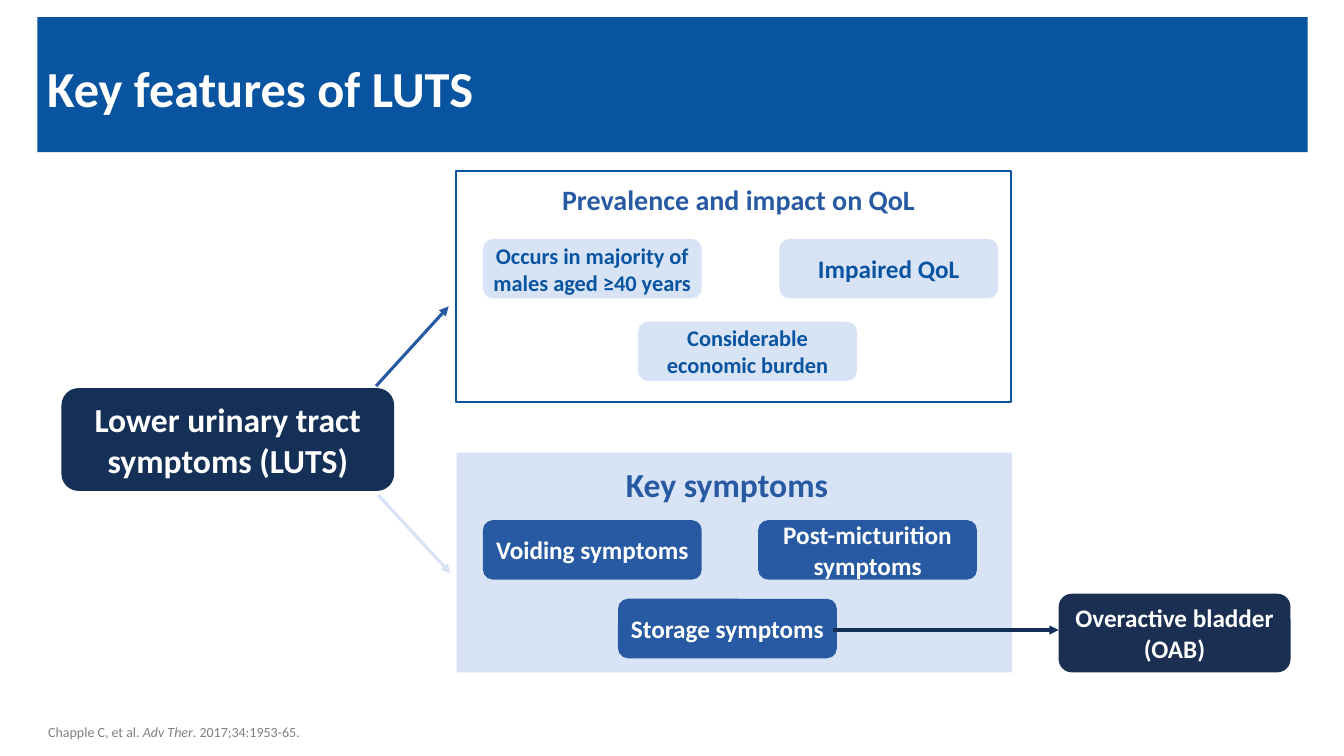
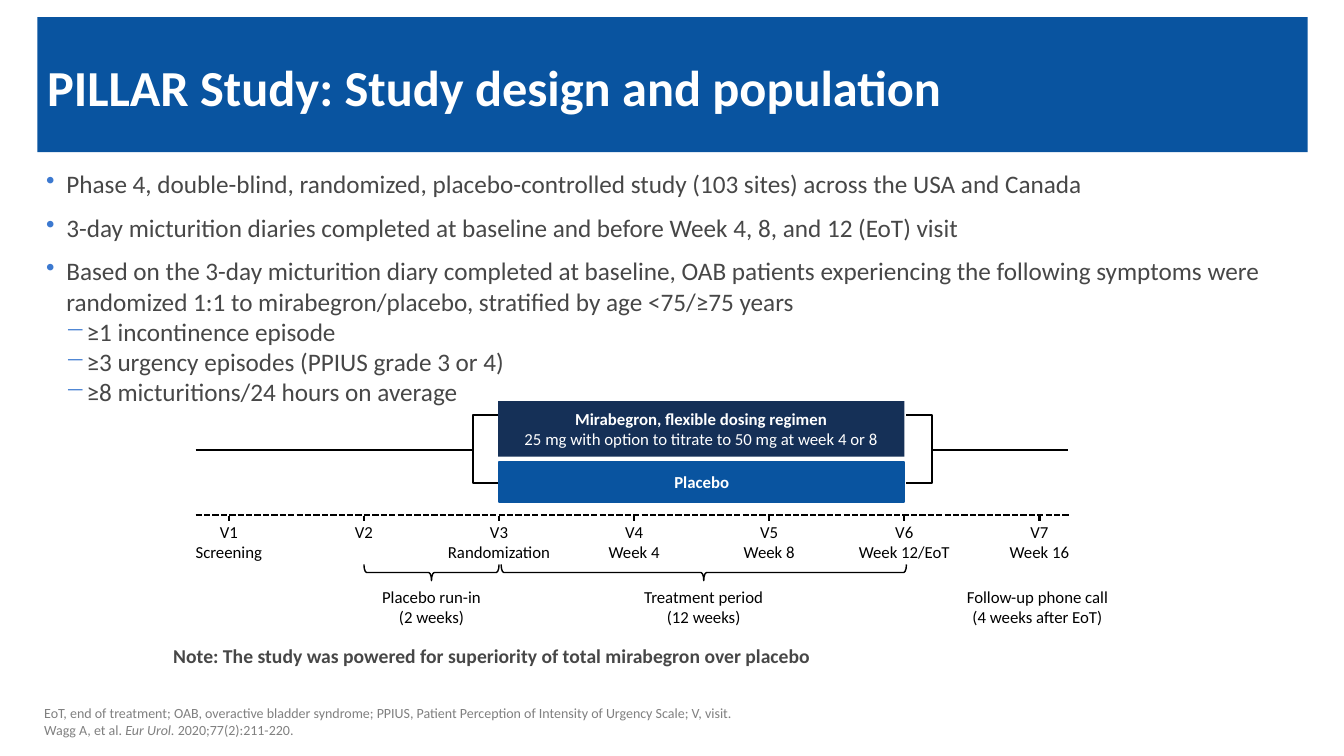
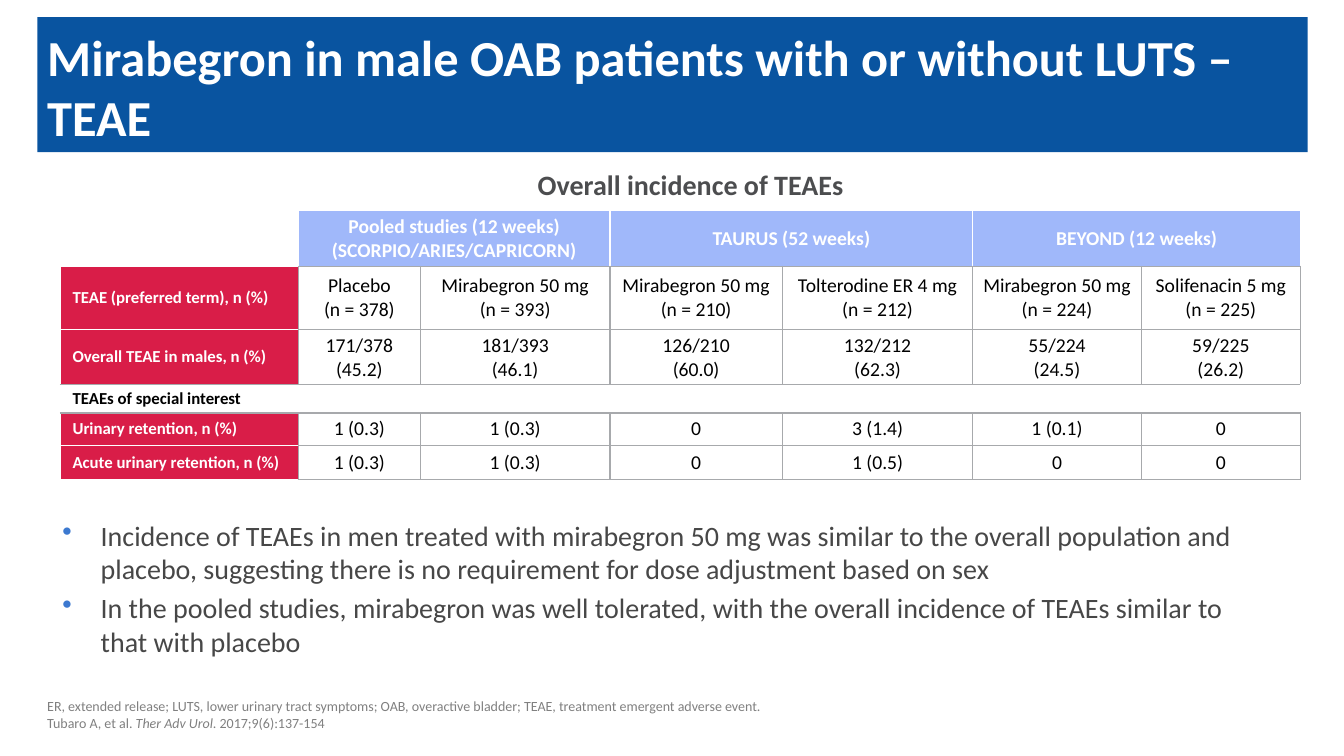
from lxml import etree
from pptx import Presentation
from pptx.dml.color import RGBColor
from pptx.enum import dml, shapes, text as t
from pptx.oxml import ns
from pptx.util import Inches, Pt

BLUE = RGBColor(0x09, 0x54, 0xA0)
MID = RGBColor(0x27, 0x5A, 0xA2)
NAVY = RGBColor(0x15, 0x30, 0x57)
DARK = RGBColor(0x1A, 0x2F, 0x52)
ARROW = RGBColor(0x13, 0x2F, 0x57)
PALE = RGBColor(0xD8, 0xE4, 0xF6)
LILAC = RGBColor(0xA0, 0xB8, 0xFA)
RED = RGBColor(0xD9, 0x1D, 0x48)
WHITE = RGBColor(0xFF, 0xFF, 0xFF)
BLACK = RGBColor(0, 0, 0)
TEXT = RGBColor(0x47, 0x47, 0x47)
HEAD = RGBColor(0x4C, 0x4D, 0x4F)
GREY = RGBColor(0x80, 0x80, 0x80)
RULE = RGBColor(0xA7, 0xA9, 0xAC)
BULLET = "3C79D0"
FONT = "Calibri"
RECT = shapes.MSO_SHAPE.RECTANGLE
ROUND = shapes.MSO_SHAPE.ROUNDED_RECTANGLE
LEFT, CENTER = t.PP_ALIGN.LEFT, t.PP_ALIGN.CENTER
MIDDLE = t.MSO_ANCHOR.MIDDLE


def write(frame, words, size, color, bold=False, align=CENTER):
    """Fill a text frame, one paragraph for each line of words."""
    frame.text = words
    for para in frame.paragraphs:
        para.alignment = align
        font = para.font
        font.name, font.size, font.bold = FONT, Pt(size), bold
        font.color.rgb = color


def put(slide, box, kind=None, fill=None, edge=None, width=1.5,
        words="", size=12, color=WHITE, bold=True, align=CENTER):
    """Add a shape, or a text box when no kind is given."""
    box = [Inches(n) for n in box]
    if kind is None:
        item = slide.shapes.add_textbox(*box)
    else:
        item = slide.shapes.add_shape(kind, *box)
        item.shadow.inherit = False
        for part, tint in ((item.fill, fill), (item.line.fill, edge)):
            if tint is None:
                part.background()
            else:
                part.solid()
                part.fore_color.rgb = tint
        if edge is not None:
            item.line.width = Pt(width)
    frame = item.text_frame
    frame.word_wrap = True
    frame.vertical_anchor = MIDDLE
    if words:
        if kind is not None:
            frame.margin_left = frame.margin_right = Inches(0.04)
            frame.margin_top = frame.margin_bottom = Inches(0.04)
        write(frame, words, size, color, bold, align)
    return item


deck = Presentation()
deck.slide_width, deck.slide_height = Inches(13.33), Inches(7.5)

# Bands and titles
pages = []
for title, top in (("Key features of LUTS", 0.49),
                   ("PILLAR Study: Study design and population", 0.48),
                   ("Mirabegron in male OAB patients with or without LUTS – TEAE", 0.48)):
    page = deck.slides.add_slide(deck.slide_layouts[6])
    put(page, (0.37, 0.17, 12.6, 1.34), RECT, BLUE)
    put(page, (0.37, top, 12.6, 0.75), words=title, size=36, align=LEFT)
    pages.append(page)
luts, study, teae = pages

# Key features
put(luts, (4.52, 1.7, 5.51, 2.29), RECT, edge=BLUE)
put(luts, (4.53, 4.49, 5.51, 2.18), RECT, PALE)
put(luts, (5.3, 1.48, 4.05, 1), words="Prevalence and impact on QoL", size=20, color=MID)
put(luts, (5.92, 4.3, 2.58, 1), words="Key symptoms", size=24, color=MID)
put(luts, (0.61, 3.85, 3.3, 1.02), ROUND, NAVY,
    words="Lower urinary tract symptoms (LUTS)", size=24)
put(luts, (10.5, 5.89, 2.3, 0.78), ROUND, DARK, words="Overactive bladder (OAB)", size=18)
for left, top, words, size, fill, color in (
        (4.79, 2.37, "Occurs in majority of males aged ≥40 years", 16, PALE, BLUE),
        (7.73, 2.37, "Impaired QoL", 18, PALE, BLUE),
        (6.33, 3.19, "Considerable economic burden", 16, PALE, BLUE),
        (4.79, 5.16, "Voiding symptoms", 18, MID, WHITE),
        (7.52, 5.16, "Post-micturition symptoms", 18, MID, WHITE),
        (6.13, 5.94, "Storage symptoms", 18, MID, WHITE)):
    put(luts, (left, top, 2.17, 0.59), ROUND, fill, words=words, size=size, color=color)

# Bulleted text: mark, left, hang, space before, space after, words
top_mark = ("•", 0.2, 0.2, 3.6)
sub_mark = ("−", 0.4, 0.21, 0, 0)
big_mark = ("•", 0.38, 0.38, 4, 0)
for page, box, size, items in (
        (study, (0.36, 1.62, 12.61, 2.29), 18, (
            (*top_mark, 6, "Phase 4, double-blind, randomized, placebo-controlled study "
             "(103 sites) across the USA and Canada"),
            (*top_mark, 6, "3-day micturition diaries completed at baseline and before "
             "Week 4, 8, and 12 (EoT) visit"),
            (*top_mark, 0, "Based on the 3-day micturition diary completed at baseline, "
             "OAB patients experiencing the following symptoms were randomized 1:1 to "
             "mirabegron/placebo, stratified by age <75/≥75 years"),
            (*sub_mark, "≥1 incontinence episode"),
            (*sub_mark, "≥3 urgency episodes (PPIUS grade 3 or 4)"),
            (*sub_mark, "≥8 micturitions/24 hours on average"))),
        (teae, (0.52, 5.09, 12.12, 1.75), 20, (
            (*big_mark, "Incidence of TEAEs in men treated with mirabegron 50 mg was similar "
             "to the overall population and placebo, suggesting there is no requirement for "
             "dose adjustment based on sex"),
            (*big_mark, "In the pooled studies, mirabegron was well tolerated, with the "
             "overall incidence of TEAEs similar to that with placebo")))):
    frame = put(page, box).text_frame
    frame.vertical_anchor = t.MSO_ANCHOR.TOP
    for i, (mark, left, hang, before, after, words) in enumerate(items):
        para = frame.add_paragraph() if i else frame.paragraphs[0]
        para.text = words
        props = para._p.get_or_add_pPr()
        props.set("marL", str(Inches(left)))
        props.set("indent", str(-Inches(hang)))
        tint = etree.SubElement(props, ns.qn("a:buClr"))
        etree.SubElement(tint, ns.qn("a:srgbClr"), val=BULLET)
        etree.SubElement(props, ns.qn("a:buChar"), char=mark)
        para.space_before = Pt(before if i else 0)
        para.space_after = Pt(after)
        para.font.name, para.font.size = FONT, Pt(size)
        para.font.color.rgb = TEXT

# Study timeline
STEP = 1.34
visits = ("V1\nScreening", "V2", "V3\nRandomization", "V4\nWeek 4",
          "V5\nWeek 8", "V6\nWeek 12/EoT", "V7\nWeek 16")
grid = study.shapes.add_table(1, len(visits), Inches(1.6), Inches(5.13),
                              Inches(STEP * len(visits)), Inches(0.41)).table
grid.first_row = grid.horz_banding = False
for cell, words in zip(grid.iter_cells(), visits):
    cell.fill.background()
    cell.margin_left = cell.margin_right = 0
    write(cell.text_frame, words, 12, BLACK)

for left, top, height in ((4.2, 5.01, 1.34), (6.9, 3.67, 4.02)):
    brace = put(study, (left, top, 0.16, height), shapes.MSO_SHAPE.LEFT_BRACE,
                edge=BLACK, width=1)
    brace.rotation = 270
    brace.adjustments[0], brace.adjustments[1] = 0.17, 0.5
for mid, words in ((4.28, "Placebo run-in\n(2 weeks)"),
                   (6.98, "Treatment period\n(12 weeks)"),
                   (10.29, "Follow-up phone call\n(4 weeks after EoT)")):
    put(study, (mid - 1, 5.77, 2, 0.5), words=words, color=BLACK, bold=False)

arm = put(study, (4.94, 3.98, 4.03, 0.55), RECT, NAVY,
          words="Mirabegron, flexible dosing regimen\n"
                "25 mg with option to titrate to 50 mg at week 4 or 8")
arm.text_frame.paragraphs[1].font.bold = False
put(study, (4.95, 4.58, 4.02, 0.4), RECT, BLUE, BLUE, words="Placebo")
for left, kind in ((4.69, shapes.MSO_SHAPE.LEFT_BRACKET),
                   (8.99, shapes.MSO_SHAPE.RIGHT_BRACKET)):
    put(study, (left, 4.12, 0.25, 0.67), kind, edge=BLACK).adjustments[0] = 0
put(study, (1.62, 6.33, 7.67, 0.34), size=14, color=TEXT, align=LEFT,
    words="Note: The study was powered for superiority of total mirabegron over placebo")

# Lines and arrows: slide, from, to, colour, width, arrow
lines = [(luts, 8.26, 6.25, 10.5, 6.25, ARROW, 2.25, True),
         (luts, 3.73, 3.83, 4.45, 3.04, MID, 2.25, True),
         (luts, 3.75, 4.91, 4.47, 5.69, PALE, 2.25, True),
         (study, 1.94, 4.46, 4.7, 4.46, BLACK, 1.5, False),
         (study, 9.25, 4.46, 10.59, 4.46, BLACK, 1.5, False)]
for i in range(len(visits)):
    x = 2.27 + STEP * i
    lines.append((study, x, 5.12, x, 5.17, BLACK, 1.5, False))
lines.append((study, 1.94, 5.11, 10.6, 5.11, BLACK, 1.5, False))
for page, x1, y1, x2, y2, color, width, arrow in lines:
    line = page.shapes.add_connector(shapes.MSO_CONNECTOR.STRAIGHT, Inches(x1), Inches(y1),
                                     Inches(x2), Inches(y2))
    line.line.color.rgb = color
    line.line.width = Pt(width)
    if arrow:
        etree.SubElement(line.line._get_or_add_ln(), ns.qn("a:tailEnd"), type="triangle")
    etree.SubElement(line._element.spPr, ns.qn("a:effectLst"))
line.line.dash_style = dml.MSO_LINE.SQUARE_DOT  # the time axis, drawn last

# Table of adverse events
put(teae, (4.11, 1.61, 5.48, 0.44), words="Overall incidence of TEAEs", size=20, color=HEAD)
rows = (
    ("", "Pooled studies (12 weeks)\n(SCORPIO/ARIES/CAPRICORN)", "",
     "TAURUS (52 weeks)", "", "BEYOND (12 weeks)", ""),
    ("TEAE (preferred term), n (%)", "Placebo\n(n = 378)", "Mirabegron 50 mg\n(n = 393)",
     "Mirabegron 50 mg\n(n = 210)", "Tolterodine ER 4 mg\n(n = 212)",
     "Mirabegron 50 mg\n(n = 224)", "Solifenacin 5 mg\n(n = 225)"),
    ("Overall TEAE in males, n (%)", "171/378\n(45.2)", "181/393\n(46.1)", "126/210\n(60.0)",
     "132/212\n(62.3)", "55/224\n(24.5)", "59/225\n(26.2)"),
    ("TEAEs of special interest", "", "", "", "", "", ""),
    ("Urinary retention, n (%)", "1 (0.3)", "1 (0.3)", "0", "3 (1.4)", "1 (0.1)", "0"),
    ("Acute urinary retention, n (%)", "1 (0.3)", "1 (0.3)", "0", "1 (0.5)", "0", "0"))
grid = teae.shapes.add_table(6, 7, Inches(0.6), Inches(2.09), Inches(12.3), Inches(2.46)).table
grid.first_row = grid.horz_banding = False
for col, width in zip(grid.columns, (2.36, 1.21, 1.88, 1.71, 1.89, 1.67, 1.58)):
    col.width = Inches(width)
for row, height in zip(grid.rows, (0.55, 0.63, 0.54, 0.28, 0.32, 0.34)):
    row.height = Inches(height)
for c in (1, 3, 5):
    grid.cell(0, c).merge(grid.cell(0, c + 1))
grid.cell(3, 0).merge(grid.cell(3, 6))

for r, row in enumerate(rows):
    for c, words in enumerate(row):
        cell = grid.cell(r, c)
        label = c == 0
        props = cell._tc.get_or_add_tcPr()
        for side, white in (("L", r == 0 or label),
                            ("R", r in (0, 3)),
                            ("T", r == 0 or label and r not in (3, 4)),
                            ("B", label and r not in (2, 3))):
            edge = etree.SubElement(props, ns.qn("a:ln" + side), w=str(Pt(1)))
            solid = etree.SubElement(edge, ns.qn("a:solidFill"))
            etree.SubElement(solid, ns.qn("a:srgbClr"), val=str(WHITE if white else RULE))
        fill = None
        if r == 0 and not label:
            fill = LILAC
        elif label and r not in (0, 3):
            fill = RED
        if fill is None:
            cell.fill.background()
        else:
            cell.fill.solid()
            cell.fill.fore_color.rgb = fill
        cell.vertical_anchor = MIDDLE
        cell.margin_left = Inches(0.12 if label else 0.04)
        cell.margin_right = cell.margin_top = cell.margin_bottom = Inches(0.04)
        write(cell.text_frame, words, 12 if label else 14, BLACK if fill is None else WHITE,
              label or r == 0, LEFT if label else CENTER)

# Sources
for page, left, top, start, journal, end in (
        (luts, 0.38, 6.94, "Chapple C, et al. ", "Adv Ther", ". 2017;34:1953-65."),
        (study, 0.34, 6.92,
         "EoT, end of treatment; OAB, overactive bladder syndrome; PPIUS, Patient Perception "
         "of Intensity of Urgency Scale; V, visit.\vWagg A, et al. ",
         "Eur Urol. ", "2020;77(2):211-220."),
        (teae, 0.37, 6.85,
         "ER, extended release; LUTS, lower urinary tract symptoms; OAB, overactive bladder; "
         "TEAE, treatment emergent adverse event.\vTubaro A, et al. ",
         "Ther Adv Urol", ". 2017;9(6):137-154")):
    frame = put(page, (left, top, 11.65, 0.45)).text_frame
    frame.vertical_anchor = t.MSO_ANCHOR.BOTTOM
    para = frame.paragraphs[0]
    para.text = start
    name = para.add_run()
    name.text = journal
    name.font.italic = True
    para.add_run().text = end
    para.font.name, para.font.size = FONT, Pt(10)
    para.font.color.rgb = GREY

deck.save("out.pptx")
